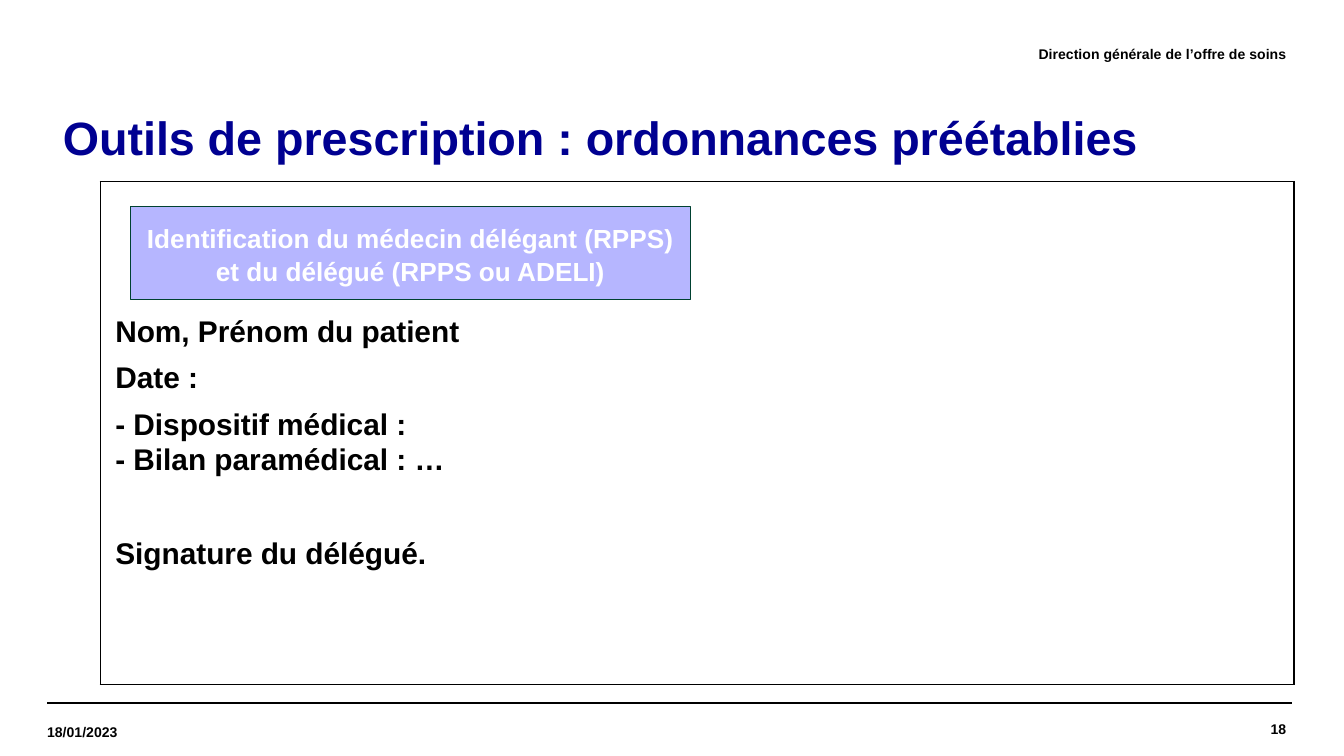
from lxml import etree
from pptx import Presentation
from pptx.dml.color import RGBColor
from pptx.enum.shapes import MSO_CONNECTOR, MSO_SHAPE
from pptx.enum.text import MSO_ANCHOR, PP_ALIGN
from pptx.oxml.ns import qn
from pptx.util import Cm, Pt

LEFT, RIGHT, MID = PP_ALIGN.LEFT, PP_ALIGN.RIGHT, PP_ALIGN.CENTER
CENTER = MSO_ANCHOR.MIDDLE
BLACK, WHITE, NAVY, LILAC, GREEN = "000000", "FFFFFF", "000091", "B6B6FF", "004130"

NOTES = [
    ("Direction générale de l’offre de soins", (7.98, 0.53, 16.33, 0.99), RIGHT),
    ("18/01/2023", (0.89, 13.34, 3.25, 0.97), LEFT),
    ("18", (20.55, 13.28, 3.76, 0.99), RIGHT),
]
TITLE = "Outils de prescription : ordonnances préétablies"
BADGE = "Identification du médecin délégant (RPPS) et du délégué (RPPS ou ADELI)"
FORM = [
    ("Nom, Prénom du patient", 6),
    ("Date\u00a0:", 6),
    ("- Dispositif médical :", 0),
    ("- Bilan paramédical : …", 31),
    ("Signature du délégué.", 0),
]
RULES = [0.89, 0.99]
RULE_Y, RULE_W = 13.28, 23.42


def color(code):
    return RGBColor.from_string(code)


def style(par, size, code, align=LEFT, lead=1.0, after=0):
    par.alignment, par.line_spacing, par.space_after = align, lead, Pt(after)
    font = par.font
    font.name, font.size, font.bold = "Arial", Pt(size), True
    font.color.rgb = color(code)


def label(text, box, size, code, align=LEFT, lead=1.0, pad=(0, 0, 0, 0)):
    frame = slide.shapes.add_textbox(*map(Cm, box)).text_frame
    frame.word_wrap, frame.vertical_anchor = True, CENTER
    frame.margin_left, frame.margin_top, frame.margin_right, frame.margin_bottom = map(Cm, pad)
    frame.text = text
    style(frame.paragraphs[0], size, code, align, lead)


def border(cell, code, width):
    props = cell._tc.get_or_add_tcPr()
    for spot, side in enumerate(("lnL", "lnR", "lnT", "lnB")):
        line = etree.Element(qn("a:" + side), w=str(Pt(width)))
        fill = etree.SubElement(line, qn("a:solidFill"))
        etree.SubElement(fill, qn("a:srgbClr"), val=code)
        props.insert(spot, line)


deck = Presentation()
deck.slide_width, deck.slide_height = Cm(25.4), Cm(14.28)
slide = deck.slides.add_slide(deck.slide_layouts[6])

for x in RULES:
    rule = slide.shapes.add_connector(
        MSO_CONNECTOR.STRAIGHT, Cm(x), Cm(RULE_Y), Cm(x + RULE_W), Cm(RULE_Y))
    rule.line.color.rgb = color(BLACK)
    rule.line.width = Pt(0.8)
    etree.SubElement(rule._element.spPr, qn("a:effectLst"))

for text, box, align in NOTES:
    label(text, box, 7.5, BLACK, align)
label(TITLE, (0.89, 1.9, 23.4, 1.5), 25, NAVY, lead=0.9, pad=(0.3, 0.13, 0.25, 0.13))

table = slide.shapes.add_table(1, 1, Cm(1.9), Cm(3.43), Cm(22.56), Cm(9.5)).table
cell = table.cell(0, 0)
cell.fill.solid()
cell.fill.fore_color.rgb = color(WHITE)
cell.margin_left = cell.margin_right = Cm(0.28)
cell.margin_top, cell.margin_bottom = Cm(2.48), 0
cell.text = "\n".join(text for text, _ in FORM)
for par, (_, after) in zip(cell.text_frame.paragraphs, FORM):
    style(par, 16, BLACK, lead=1.07, after=after)
border(cell, BLACK, 1)

badge = slide.shapes.add_shape(MSO_SHAPE.RECTANGLE, Cm(2.46), Cm(3.91), Cm(10.6), Cm(1.75))
badge.shadow.inherit = False
badge.fill.solid()
badge.fill.fore_color.rgb = color(LILAC)
badge.line.color.rgb = color(GREEN)
badge.line.width = Pt(0.5)
badge.text_frame.word_wrap = True
badge.text_frame.vertical_anchor = CENTER
badge.text_frame.text = BADGE
style(badge.text_frame.paragraphs[0], 14, WHITE, MID, 1.07, 6)

deck.save("out.pptx")
